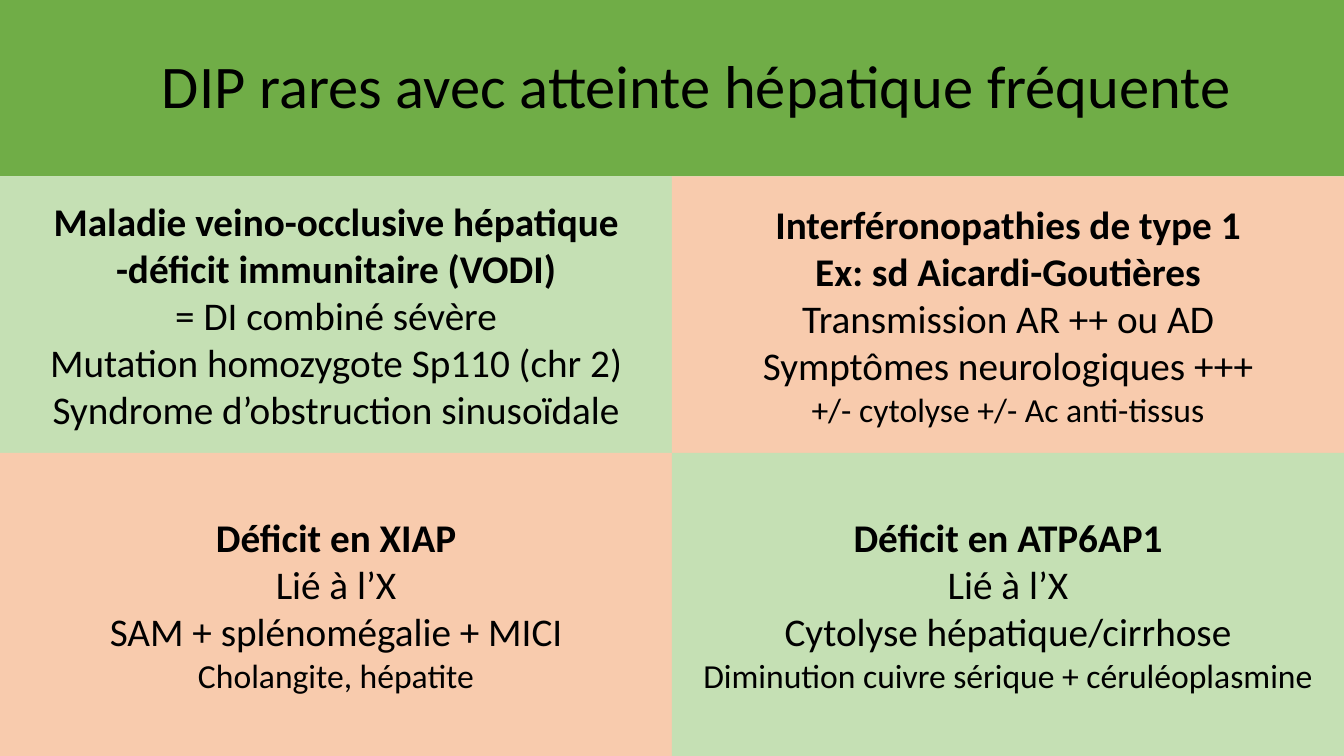
import pptx
import pptx.util
import pptx.dml.color
import pptx.enum.shapes
import pptx.enum.text
from dataclasses import dataclass

Pt = pptx.util.Pt


@dataclass(frozen=True)
class Theme:
    font: str = "Calibri"
    ink: str = "000000"
    band: str = "70AD47"
    green: str = "C5E0B4"
    orange: str = "F8CBAD"
    title: float = 43.2
    body: float = 28
    small: float = 24


THEME = Theme()
SLIDE_W, SLIDE_H = 960, 540
BAND_H = 126
UPPER_H = 197.5

# Each line: text, bold, size
DISEASES = [
    [
        [("Maladie veino-occlusive hépatique -déficit immunitaire (VODI)", True, THEME.body),
         ("= DI combiné sévère", False, THEME.body),
         ("Mutation homozygote Sp110 (chr 2)", False, THEME.body),
         ("Syndrome d’obstruction sinusoïdale", False, THEME.body)],
        [("Interféronopathies de type 1", True, THEME.body),
         ("Ex: sd Aicardi-Goutières", True, THEME.body),
         ("Transmission AR ++ ou AD", False, THEME.body),
         ("Symptômes neurologiques +++", False, THEME.body),
         ("+/- cytolyse +/- Ac anti-tissus", False, THEME.small)],
    ],
    [
        [("Déficit en XIAP", True, THEME.body),
         ("Lié à l’X", False, THEME.body),
         ("SAM + splénomégalie + MICI", False, THEME.body),
         ("Cholangite, hépatite", False, THEME.small)],
        [("Déficit en ATP6AP1", True, THEME.body),
         ("Lié à l’X", False, THEME.body),
         ("Cytolyse hépatique/cirrhose", False, THEME.body),
         ("Diminution cuivre sérique + céruléoplasmine", False, THEME.small)],
    ],
]


def rgb(color):
    return pptx.dml.color.RGBColor.from_string(color)


def add_rect(slide, box, fill):
    sp = slide.shapes.add_shape(pptx.enum.shapes.MSO_SHAPE.RECTANGLE, *map(Pt, box))
    sp.shadow.inherit = False
    sp.fill.solid()
    sp.fill.fore_color.rgb = rgb(fill)
    sp.line.fill.background()
    return sp


def setup_frame(sp):
    tf = sp.text_frame
    tf.word_wrap = True
    tf.vertical_anchor = pptx.enum.text.MSO_ANCHOR.MIDDLE
    return tf


def write(p, text, size=THEME.body, bold=False, spacing=1.0):
    p.alignment = pptx.enum.text.PP_ALIGN.CENTER
    p.line_spacing = spacing
    r = p.add_run()
    r.text = text
    r.font.name = THEME.font
    r.font.size = Pt(size)
    r.font.bold = bold
    r.font.color.rgb = rgb(THEME.ink)


def add_title_band(slide, box, text):
    x, y, w, h = box
    add_rect(slide, box, THEME.band)
    sp = slide.shapes.add_textbox(Pt(x + 108), Pt(y + 23), Pt(w - 181), Pt(h - 45))
    write(setup_frame(sp).paragraphs[0], text, size=THEME.title, spacing=0.9)


def add_disease(slide, box, fill, lines):
    tf = setup_frame(add_rect(slide, box, fill))
    for i, (text, bold, size) in enumerate(lines):
        p = tf.add_paragraph() if i else tf.paragraphs[0]
        write(p, text, size=size, bold=bold)


def add_disease_grid(slide, box, rows):
    x, y, w, h = box
    cell_w = w / 2
    heights = (UPPER_H, h - UPPER_H)
    for i, row in enumerate(rows):
        for j, lines in enumerate(row):
            # Colours alternate like a chessboard
            fill = THEME.orange if (i + j) % 2 else THEME.green
            cell = (x + j * cell_w, y + i * UPPER_H, cell_w, heights[i])
            add_disease(slide, cell, fill, lines)


def main():
    prs = pptx.Presentation()
    prs.slide_width, prs.slide_height = Pt(SLIDE_W), Pt(SLIDE_H)
    slide = prs.slides.add_slide(prs.slide_layouts[6])

    # Title band
    add_title_band(slide, (0, 0, SLIDE_W, BAND_H),
                   "DIP rares avec atteinte hépatique fréquente")
    # Four diseases
    add_disease_grid(slide, (0, BAND_H, SLIDE_W, SLIDE_H - BAND_H), DISEASES)

    prs.save("out.pptx")


if __name__ == "__main__":
    main()
